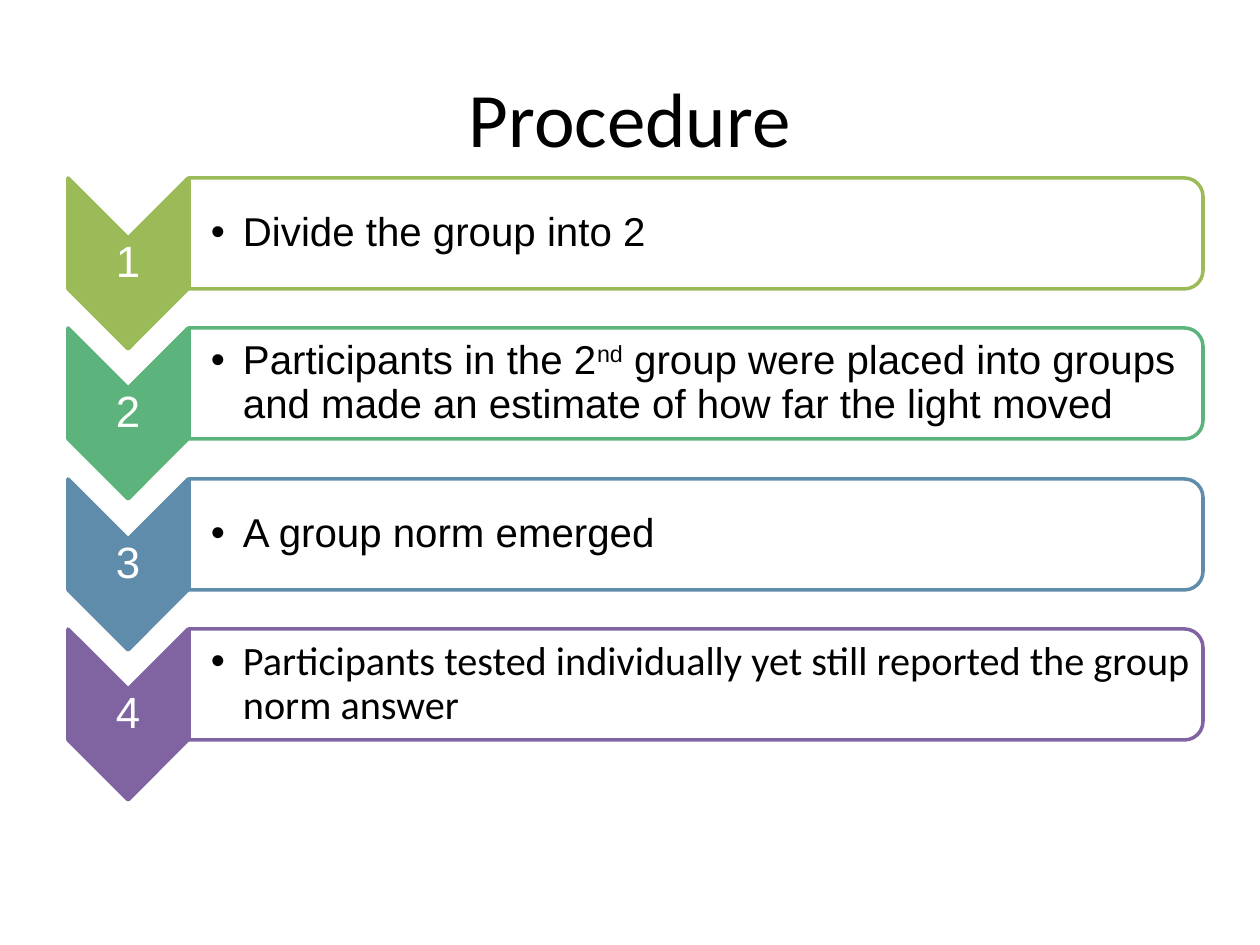
from lxml.etree import SubElement as Sub
from pptx import Presentation
from pptx.dml.color import RGBColor as Rgb
from pptx.enum.shapes import MSO_SHAPE as Kind
from pptx.enum.text import MSO_ANCHOR as Anchor, PP_ALIGN as Align
from pptx.oxml.ns import qn
from pptx.util import Emu, Pt

SCALE = 914400 / 126
COLORS = {
    "text": "000000", "white": "FFFFFF",
    "green": "9BBB59", "teal": "5CB37C", "blue": "608CAB", "purple": "8064A2",
}
# Each step: colour, font, runs of (text, raised)
STEPS = [
    ("green", "Arial", [("Divide the group into 2", False)]),
    ("teal", "Arial", [
        ("Participants in the 2", False), ("nd", True),
        (" group were placed into groups and made an estimate"
         " of how far the light moved", False)]),
    ("blue", "Arial", [("A group norm emerged", False)]),
    ("purple", "Calibri", [
        ("Participants tested individually yet still reported"
         " the group norm answer", False)]),
]
LEFT, TOP = 68, 178
CHEV_W, CHEV_H = 120, 171
BAR_X, BAR_W, BAR_H = 189, 1014, 111


def px(num):
    return Emu(round(num * SCALE))


def rgb(name):
    return Rgb.from_string(COLORS[name])


def apply(obj, **vals):
    for key, val in vals.items():
        setattr(obj, key, val)


def add_turned(slide, kind, box, fill, line):
    """Add a shape turned by 90 degrees that covers the given box."""
    x, y, w, h = box
    shift = (w - h) / 2
    shape = slide.shapes.add_shape(
        kind, px(x + shift), px(y - shift), px(h), px(w))
    shape.rotation = 90
    shape.shadow.inherit = False
    shape.fill.solid()
    shape.fill.fore_color.rgb = rgb(fill)
    shape.line.color.rgb = rgb(line)
    shape.line.width = Pt(2)
    return shape


def add_text(slide, box, runs, pads, font, align=Align.CENTER, space=0.9):
    """Add a middle-anchored text box and return its paragraph."""
    frame = slide.shapes.add_textbox(*map(px, box)).text_frame
    left, top, right, low = map(px, pads)
    apply(frame, word_wrap=True, vertical_anchor=Anchor.MIDDLE,
          margin_left=left, margin_top=top,
          margin_right=right, margin_bottom=low)
    para = frame.paragraphs[0]
    apply(para, alignment=align, line_spacing=space)
    name, size, color = font
    for text, raised in runs:
        run = para.add_run()
        run.text = text
        apply(run.font, name=name, size=Pt(size))
        run.font.color.rgb = rgb(color)
        if raised:
            run.font._element.set("baseline", "30000")
    return para


def add_bullet(para):
    props = para._p.get_or_add_pPr()
    props.set("marL", str(px(32)))
    props.set("indent", str(-px(32)))
    Sub(props, qn("a:buFont")).set("typeface", "Arial")
    Sub(props, qn("a:buChar")).set("char", "•")


def add_step(slide, num, y, color, face, runs):
    # Numbered chevron
    add_turned(slide, Kind.CHEVRON, (LEFT, y, CHEV_W, CHEV_H), color, color)
    add_text(slide, (LEFT, y + 59, CHEV_W, 52), [(str(num), False)],
             (2, 2, 2, 2), ("Arial", 25, "white"))
    # Bar, slightly see-through
    bar = add_turned(slide, Kind.ROUND_2_SAME_RECTANGLE,
                     (BAR_X, y, BAR_W, BAR_H), "white", color)
    tint = bar._element.spPr.find(qn("a:solidFill"))[0]
    Sub(tint, qn("a:alpha")).set("val", "90000")
    # Bulleted line
    para = add_text(slide, (BAR_X, y + 5, 1009, 101), runs,
                    (22, 2, 2, 2), (face, 23, "text"), Align.LEFT)
    add_bullet(para)


def main():
    deck = Presentation()
    apply(deck, slide_width=px(1260), slide_height=px(945))
    slide = deck.slides.add_slide(deck.slide_layouts[6])
    # Title
    add_text(slide, (63, 38, 1134, 158), [("Procedure", False)],
             (13, 6, 13, 6), ("Calibri", 44, "text"), space=1.0)
    # Steps, 150.5 px apart
    for i, step in enumerate(STEPS):
        add_step(slide, i + 1, TOP + i * 301 // 2, *step)
    deck.save("out.pptx")


if __name__ == "__main__":
    main()
